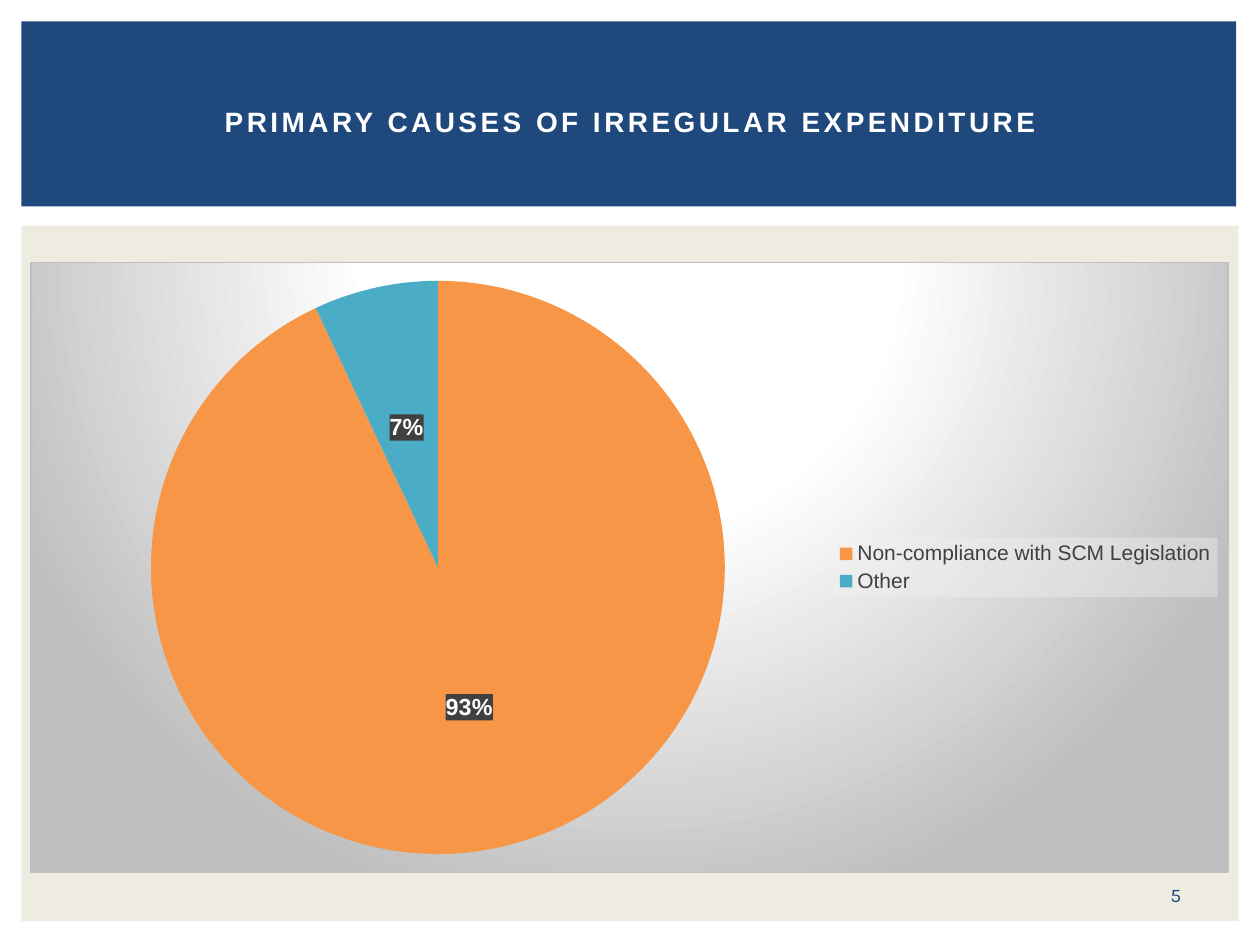
from lxml import etree
from pptx import Presentation
from pptx import util as u
from pptx.chart.data import CategoryChartData
from pptx.dml.color import RGBColor
from pptx.enum import chart as charts, shapes, text
from pptx.oxml import parse_xml
from pptx.oxml.ns import nsdecls, qn

TITLE = "PRIMARY CAUSES OF IRREGULAR EXPENDITURE"
PAGE_NUMBER = "5"
NAVY = RGBColor(0x1F, 0x49, 0x7D)
CREAM = RGBColor(0xEE, 0xEC, 0xE1)
WHITE = RGBColor(0xFF, 0xFF, 0xFF)
BLACK = RGBColor(0, 0, 0)
DARK_GREY = RGBColor(0x40, 0x40, 0x40)
LIGHT_GREY = RGBColor(0xF2, 0xF2, 0xF2)
BORDER_GREY = RGBColor(0xBF, 0xBF, 0xBF)
ORANGE = RGBColor(0xF7, 0x96, 0x46)
TEAL = RGBColor(0x4B, 0xAC, 0xC6)

CAUSES = [("Non-compliance with SCM Legislation", 93, ORANGE), ("Other", 7, TEAL)]

# Left, top, width, height in centimetres
PANEL = (0.43, 4.55, 24.54, 14.02)
BANNER = (0.43, 0.43, 24.49, 3.73)
CHART = (0.61, 5.28, 24.16, 12.32)
NUMBER = (22.89, 17.65, 1.63, 0.76)
HEADING = (1.07, 0.99, 23.29, 2.92)
# Shares of the chart's width and height
PIE_AREA = {"x": 0.1, "y": 0.03, "w": 0.48, "h": 0.94}


def place(area):
    return [u.Cm(length) for length in area]


def add_band(page, area, color):
    band = page.shapes.add_shape(shapes.MSO_SHAPE.RECTANGLE, *place(area))
    band.shadow.inherit = False
    band.fill.solid()
    band.fill.fore_color.rgb = color
    band.line.fill.background()


def style_font(font, size, color, name="Arial", bold=False):
    font.size, font.name, font.bold = u.Pt(size), name, bold
    font.color.rgb = color


def add_text(page, area, words, **style):
    box = page.shapes.add_textbox(*place(area))
    frame = box.text_frame
    frame.word_wrap = True
    frame.vertical_anchor = text.MSO_ANCHOR.MIDDLE
    para = frame.paragraphs[0]
    para.text = words
    para.alignment = text.PP_ALIGN.CENTER
    span = para.runs[0]
    style_font(span.font, **style)
    return span


def set_background(element, fill, line="<a:ln><a:noFill/></a:ln>"):
    """Shape properties stand just before the text properties."""
    element.find(qn("c:txPr")).addprevious(
        parse_xml(f"<c:spPr {nsdecls('c', 'a')}>{fill}{line}</c:spPr>"))


def clear_fill(color, alpha):
    return (f'<a:solidFill><a:srgbClr val="{color}">'
            f'<a:alpha val="{alpha * 1000}"/></a:srgbClr></a:solidFill>')


def add_pie(page):
    data = CategoryChartData()
    data.categories = [name for name, _, _ in CAUSES]
    data.add_series("Series 1", [value for _, value, _ in CAUSES])
    chart = page.shapes.add_chart(charts.XL_CHART_TYPE.PIE, *place(CHART), data).chart
    chart.has_title = False
    style_font(chart.font, 10, BLACK)

    # Slices
    plot = chart.plots[0]
    plot.vary_by_categories = True
    for index, (_, _, color) in enumerate(CAUSES):
        point = plot.series[0].points[index]
        point.format.fill.solid()
        point.format.fill.fore_color.rgb = color
        point.format.line.fill.background()

    # Percentage labels
    plot.has_data_labels = True
    labels = plot.data_labels
    labels.show_percentage, labels.show_value = True, False
    labels.number_format, labels.number_format_is_linked = "0%", False
    labels.position = charts.XL_LABEL_POSITION.CENTER
    style_font(labels.font, 13.3, WHITE, bold=True)
    set_background(labels.font._element.getparent().getparent().getparent().getparent(),
                   clear_fill(DARK_GREY, 90))

    # Legend
    chart.has_legend = True
    legend = chart.legend
    legend.position = charts.XL_LEGEND_POSITION.RIGHT
    legend.include_in_layout = False
    style_font(legend.font, 12, DARK_GREY)
    set_background(legend._element, clear_fill(LIGHT_GREY, 39))

    # Radial backdrop with a thin border
    stops = "".join(f'<a:gs pos="{pos * 1000}"><a:srgbClr val="{color}"/></a:gs>'
                    for pos, color in [(0, WHITE), (39, WHITE), (100, BORDER_GREY)])
    set_background(
        chart._chartSpace,
        f'<a:gradFill><a:gsLst>{stops}</a:gsLst><a:path path="circle">'
        '<a:fillToRect l="50000" t="-80000" r="50000" b="180000"/></a:path></a:gradFill>',
        f'<a:ln w="{u.Pt(0.75)}"><a:solidFill><a:srgbClr val="{BORDER_GREY}"/>'
        '</a:solidFill></a:ln>')

    # Pie position within the chart
    area = chart._chartSpace.find(".//" + qn("c:plotArea"))
    for old in area.findall(qn("c:layout")):
        area.remove(old)
    layout = etree.Element(qn("c:layout"))
    manual = etree.SubElement(layout, qn("c:manualLayout"))
    settings = {"layoutTarget": "inner", "xMode": "edge", "yMode": "edge", **PIE_AREA}
    for tag, value in settings.items():
        etree.SubElement(manual, qn(f"c:{tag}")).set("val", str(value))
    area.insert(0, layout)


def main():
    deck = Presentation()
    deck.slide_width, deck.slide_height = u.Cm(25.4), u.Cm(19.05)
    page = deck.slides.add_slide(deck.slide_layouts[6])
    add_band(page, PANEL, CREAM)
    add_band(page, BANNER, NAVY)
    add_pie(page)
    add_text(page, NUMBER, PAGE_NUMBER, size=11, color=NAVY, name="Karla")
    heading = add_text(page, HEADING, TITLE, size=16, color=WHITE, bold=True)
    heading.font._element.set("spc", "200")
    deck.save("out.pptx")


if __name__ == "__main__":
    main()
